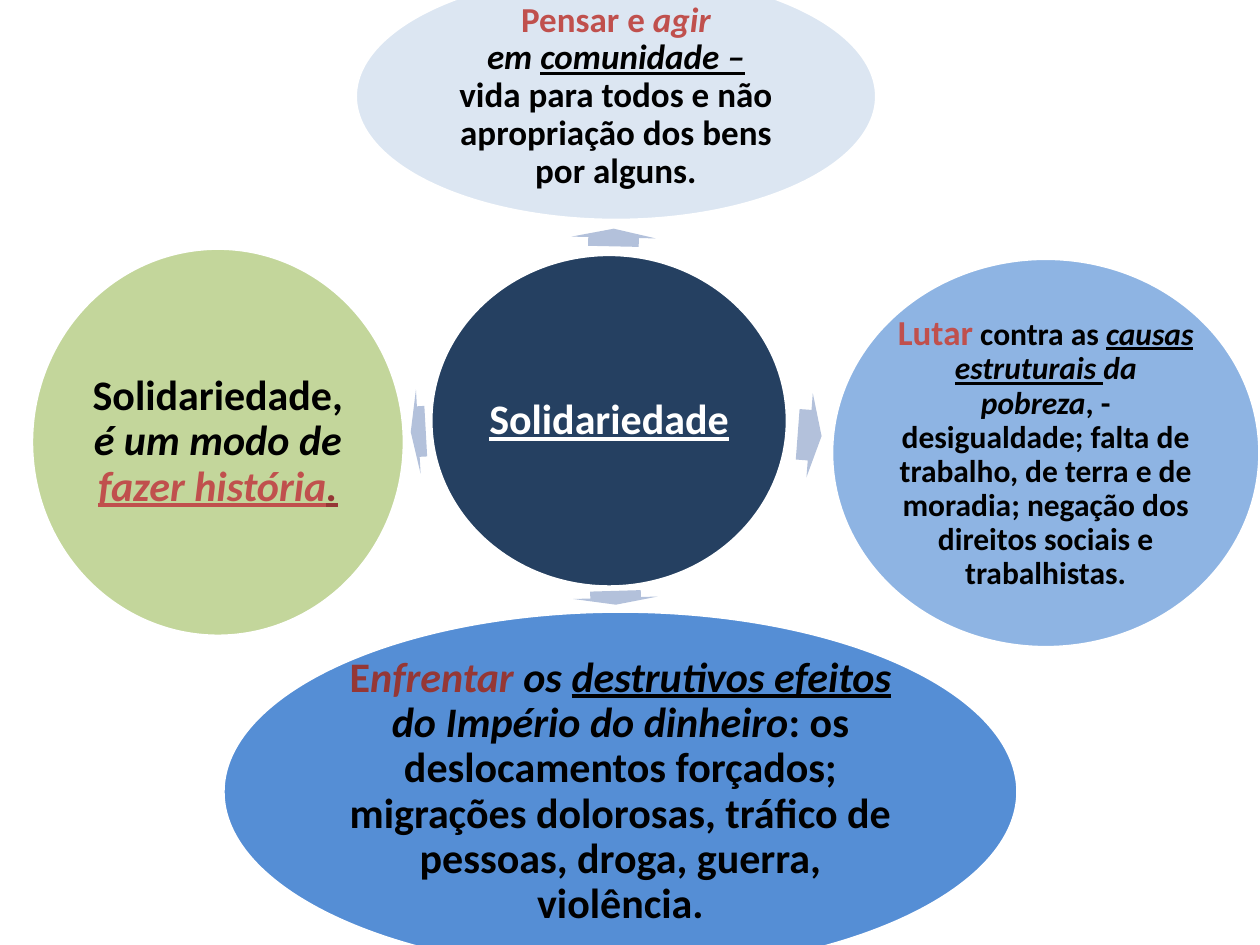
import pptx
import pptx.util
import pptx.dml.color
import pptx.enum.shapes
import pptx.enum.text

Pt = pptx.util.Pt
RGBColor = pptx.dml.color.RGBColor
MSO_SHAPE = pptx.enum.shapes.MSO_SHAPE

WHITE = RGBColor(0xFF, 0xFF, 0xFF)
BLACK = RGBColor(0x00, 0x00, 0x00)
RED = RGBColor(0xC0, 0x50, 0x4D)
DARK_RED = RGBColor(0x95, 0x37, 0x35)
NAVY = RGBColor(0x25, 0x40, 0x61)
PALE_BLUE = RGBColor(0xDC, 0xE6, 0xF2)
LIGHT_BLUE = RGBColor(0x8E, 0xB4, 0xE3)
BLUE = RGBColor(0x55, 0x8E, 0xD5)
GREEN = RGBColor(0xC3, 0xD6, 0x9B)
ARROW_GREY = RGBColor(0xB3, 0xC1, 0xDB)

ARROW_HEIGHT = 48.2

# Ellipse: box, fill, font size, paragraphs of (text, colour, style[, size]);
# style holds "i" for italic and "u" for underline.
HUB = ((246.2, 145.4, 203.8, 190.1), NAVY, 24,
       [[("Solidariedade", WHITE, "u")]])
TOP = ((203, -15.8, 298, 141.8), PALE_BLUE, 20, [
    [("Pensar e ", RED, ""), ("agir", RED, "i")],
    [("em ", BLACK, "i"), ("comunidade –", BLACK, "iu")],
    [("vida para todos e não apropriação dos bens por alguns.", BLACK, "")],
])
RIGHT = ((475.2, 147.6, 244.8, 222.5), LIGHT_BLUE, 18, [[
    ("Lutar", RED, "", 20),
    (" contra as ", BLACK, ""),
    ("causas estruturais ", BLACK, "iu"),
    ("da pobreza", BLACK, "i"),
    (", - desigualdade; falta de trabalho, de terra e de moradia; "
     "negação dos direitos sociais e trabalhistas.", BLACK, ""),
]])
BOTTOM = ((127.4, 349.2, 454.3, 206.6), BLUE, 24, [[
    ("E", DARK_RED, ""),
    ("nfrentar", DARK_RED, "i"),
    (" os ", BLACK, "i"),
    ("destrutivos efeitos ", BLACK, "iu"),
    ("do Império do dinheiro", BLACK, "i"),
    (": os deslocamentos forçados; migrações dolorosas, tráfico de "
     "pessoas, droga, guerra, violência.", BLACK, ""),
]])
LEFT = ((18, 141.8, 213.1, 221.8), GREEN, 24, [[
    ("Solidariedade, ", BLACK, ""),
    ("é um modo de ", BLACK, "i"),
    ("fazer história", RED, "iu"),
    (".", DARK_RED, "iu"),
]])

# Each outer ellipse with its arrow: left, top, width, rotation
SPOKES = [
    ((345.6, 111.6, 10.1, 271.2), TOP),
    ((455.8, 224.6, 13.7, 4.3), RIGHT),
    ((347.8, 317.5, 7.9, 88.3), BOTTOM),
    ((234.7, 222.5, 8.6, 176.8), LEFT),
]

prs = pptx.Presentation()
prs.slide_width, prs.slide_height = Pt(720), Pt(540)
s = prs.slides.add_slide(prs.slide_layouts[6])


def add_ellipse(box, fill, size, paragraphs):
    sp = s.shapes.add_shape(MSO_SHAPE.OVAL, *[Pt(v) for v in box])
    sp.shadow.inherit = False
    sp.fill.solid()
    sp.fill.fore_color.rgb = fill
    sp.line.color.rgb = WHITE
    sp.line.width = Pt(2)
    tf = sp.text_frame
    tf.word_wrap = True
    tf.vertical_anchor = pptx.enum.text.MSO_ANCHOR.MIDDLE
    tf.margin_left = tf.margin_right = Pt(2)
    tf.margin_top = tf.margin_bottom = Pt(2)
    for i, runs in enumerate(paragraphs):
        p = tf.add_paragraph() if i else tf.paragraphs[0]
        p.alignment = pptx.enum.text.PP_ALIGN.CENTER
        p.line_spacing = 0.9
        p.font.name = "Calibri"
        p.font.size = Pt(size)
        p.font.bold = True
        for text, color, style, *own_size in runs:
            r = p.add_run()
            r.text = text
            r.font.color.rgb = color
            r.font.italic = "i" in style
            r.font.underline = "u" in style
            if own_size:
                r.font.size = Pt(own_size[0])


add_ellipse(*HUB)
for (left, top, width, rotation), ellipse in SPOKES:
    sp = s.shapes.add_shape(MSO_SHAPE.RIGHT_ARROW, Pt(left), Pt(top),
                            Pt(width), Pt(ARROW_HEIGHT))
    sp.rotation = rotation
    sp.adjustments[0] = 0.6
    sp.adjustments[1] = 0.5
    sp.shadow.inherit = False
    sp.fill.solid()
    sp.fill.fore_color.rgb = ARROW_GREY
    sp.line.fill.background()
    add_ellipse(*ellipse)

prs.save("out.pptx")
